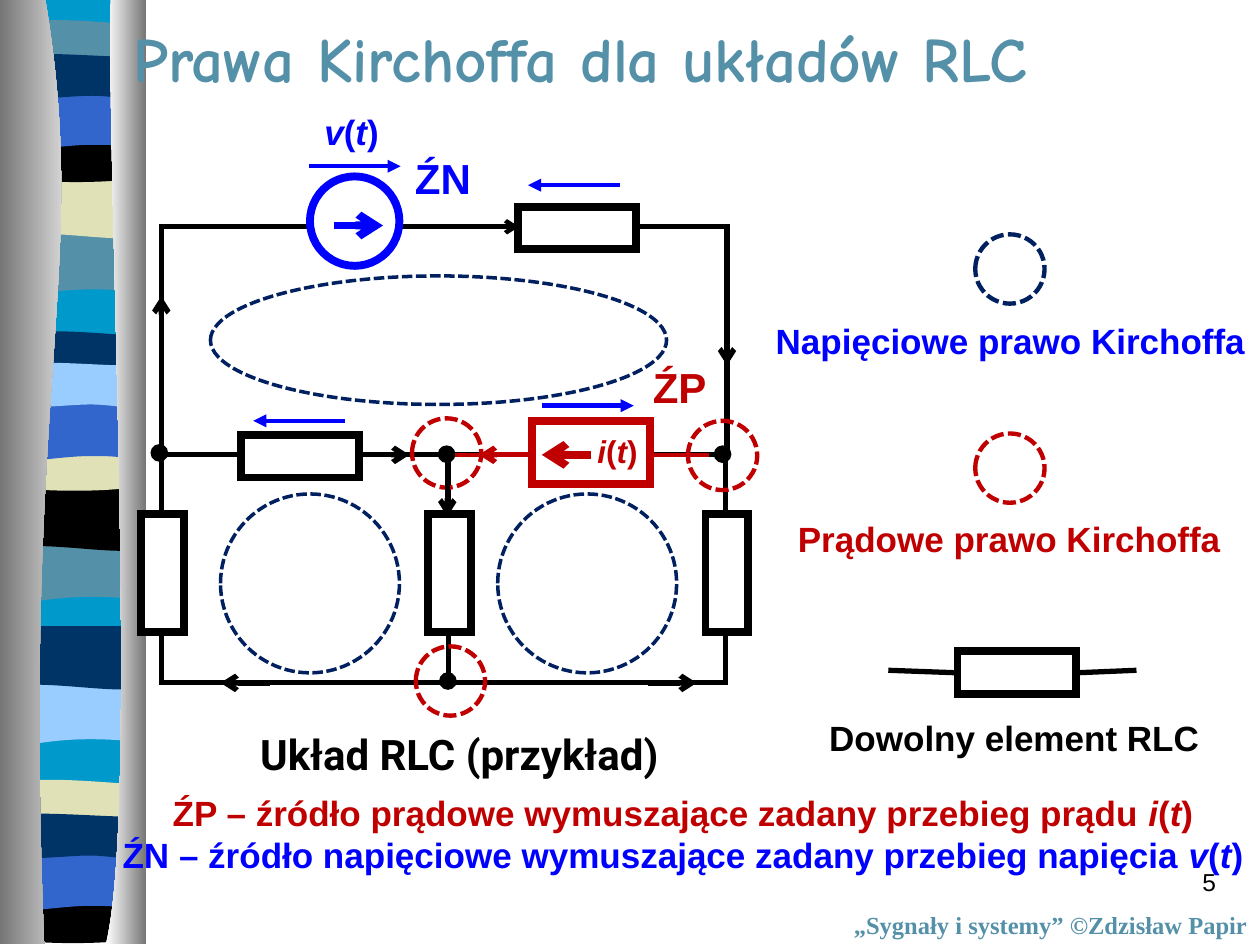
from lxml import etree
from pptx import Presentation
from pptx.dml.color import RGBColor
from pptx.enum.dml import MSO_LINE
from pptx.enum.shapes import MSO_CONNECTOR, MSO_SHAPE
from pptx.enum.text import MSO_ANCHOR, MSO_AUTO_SIZE, PP_ALIGN
from pptx.oxml.ns import qn
from pptx.util import Inches, Pt

OVAL, RECT = MSO_SHAPE.OVAL, MSO_SHAPE.RECTANGLE
DASH = MSO_LINE.SQUARE_DOT
STRAIGHT = MSO_CONNECTOR.STRAIGHT
LEFT, CENTER, RIGHT = PP_ALIGN.LEFT, PP_ALIGN.CENTER, PP_ALIGN.RIGHT
TOP, MIDDLE = MSO_ANCHOR.TOP, MSO_ANCHOR.MIDDLE
GROW, FIXED = MSO_AUTO_SIZE.SHAPE_TO_FIT_TEXT, MSO_AUTO_SIZE.NONE

BLACK, WHITE, BLUE, RED, NAVY = "000000", "FFFFFF", "0000FF", "C00000", "002060"
TEAL, CREAM, DEEP, ROYAL, SKY, CYAN = "5490A8", "E1E1B7", "003366", "3366CC", "99CCFF", "0099CC"
GREY = "767676"


def rgb(hex_color):
    return RGBColor.from_string(hex_color)


class SlideBuilder:
    font = "Arial"

    def __init__(self, slide):
        self.shapes = slide.shapes

    def text(self, box, paragraphs, size, font=None, align=CENTER, anchor=TOP,
             bold=True, wrap=False, before=0):
        """Each paragraph is (colour, runs); every second run is italic."""
        frame = self.shapes.add_textbox(*map(Inches, box)).text_frame
        frame.word_wrap = wrap
        frame.auto_size = FIXED if wrap else GROW
        frame.vertical_anchor = anchor
        for index, (color, runs) in enumerate(paragraphs):
            paragraph = frame.add_paragraph() if index else frame.paragraphs[0]
            paragraph.alignment = align
            paragraph.space_before = Pt(before)
            for position, words in enumerate(runs):
                if not words:
                    continue
                run = paragraph.add_run()
                run.text = words
                run.font.name = font or self.font
                run.font.size = Pt(size)
                run.font.bold = bold
                run.font.italic = position % 2 == 1
                run.font.color.rgb = rgb(color)

    def shape(self, kind, box, color, width, fill=None, dash=None):
        shape = self.shapes.add_shape(kind, *map(Inches, box))
        shape.shadow.inherit = False
        if fill:
            shape.fill.solid()
            shape.fill.fore_color.rgb = rgb(fill)
        else:
            shape.fill.background()
        shape.line.color.rgb = rgb(color)
        shape.line.width = Pt(width)
        if dash:
            shape.line.dash_style = dash
        etree.SubElement(shape.line._get_or_add_ln(), qn("a:miter"), lim="800000")

    def dot(self, x, y):
        self.shape(OVAL, (x, y, 0.13, 0.13), BLACK, 0.75, BLACK)

    def ring(self, x, y, color=RED):
        self.shape(OVAL, (x, y, 0.55, 0.55), color, 2.5, dash=DASH)

    def element(self, x, y, w=0.94, h=0.34, color=BLACK):
        self.shape(RECT, (x, y, w, h), color, 4.5, WHITE)

    def line(self, start, end, color=BLACK, width=3, tip=None):
        line = self.shapes.add_connector(STRAIGHT, *map(Inches, start + end))
        line.line.color.rgb = rgb(color)
        line.line.width = Pt(width)
        if tip:
            etree.SubElement(line.line._get_or_add_ln(), qn("a:tailEnd"), type=tip)
        etree.SubElement(line._element.spPr, qn("a:effectLst"))

    def freeform(self, segments, *colors, left=0, top=0):
        """Segments of 2 numbers are corners, of 6 Bézier curves.
        One colour gives a plain fill, two a left-to-right gradient."""
        points = [(Inches(left + x), Inches(top + y))
                  for segment in segments
                  for x, y in zip(segment[::2], segment[1::2])]
        builder = self.shapes.build_freeform(*points[0], scale=1.0)
        builder.add_line_segments(points[1:], close=True)
        shape = builder.convert_to_shape()
        # Join the three points of each curve into one Bézier command
        commands = iter(list(shape._element.iter(qn("a:lnTo"))))
        for segment in segments[1:]:
            command = next(commands)
            if len(segment) == 6:
                command.tag = qn("a:cubicBezTo")
                for _ in range(2):
                    extra = next(commands)
                    command.append(extra[0])
                    extra.getparent().remove(extra)
        shape.shadow.inherit = False
        shape.line.fill.background()
        if len(colors) == 1:
            shape.fill.solid()
            shape.fill.fore_color.rgb = rgb(colors[0])
            return
        shape.fill.gradient()
        shape.fill.gradient_angle = 0
        for stop, color in zip(shape.fill.gradient_stops, colors):
            stop.color.rgb = rgb(color)


def draw_ribbon(page):
    page.freeform([(1.14, 0), (1.14, 7.47), (0.06, 7.47), (0.06, 0)], CYAN)
    # Six wavy profiles, each used once in three sections: (left, tops, colours)
    profiles = [
        [(1.08, 0), (1.08, 0, 1.08, 0.47, 1.08, 0.47),
         (0.33, 0.39, 0.18, 0.55, 0, 0.47), (0, 0)],
        [(1.08, 0), (1.08, 0.48), (0.9, 0.55, 0.34, 0.42, 0, 0.48), (0, 0)],
        [(1.08, 0.05), (1.08, 0.29), (0.9, 0.33, 0.18, 0.33, 0, 0.29), (0, 0.05),
         (0.07, 0, 0.23, 0.01, 0.41, 0.01), (0.59, 0.01, 0.94, 0.04, 1.08, 0.05)],
        [(1.08, 0), (1.08, 0.32), (0.9, 0.38, 0.18, 0.38, 0, 0.32), (0, 0),
         (0.67, 0.05, 0.86, 0, 1.08, 0)],
        [(1.08, 0), (1.08, 0, 1.08, 0.47, 1.08, 0.47), (0.91, 0.42, 0.84, 0.42, 0.66, 0.42),
         (0.48, 0.42, 0.16, 0.47, 0, 0.47), (0, 0)],
        [(1.08, 0.05), (1.08, 0.36), (1.01, 0.41, 0.85, 0.36, 0.67, 0.36),
         (0.49, 0.36, 0.11, 0.41, 0, 0.36), (0, 0.05),
         (0.15, 0, 0.74, 0.05, 0.92, 0.05), (1.1, 0.05, 1.05, 0.05, 1.08, 0.05)],
    ]
    sections = [
        (0.06, (1.85, 1.39, 0.15, 1.08, 0.73, 0.4), (TEAL, CREAM, TEAL, BLACK, ROYAL, DEEP)),
        (0.05, (4.29, 3.87, 2.62, 3.53, 3.2, 2.85), (TEAL, BLACK, DEEP, CREAM, ROYAL, SKY)),
        (0.04, (5.42, 4.97, 6.18, 7.12, 6.77, 6.43), (SKY, DEEP, CREAM, BLACK, ROYAL, DEEP)),
    ]
    for left, tops, colors in sections:
        for profile, top, color in zip(profiles, tops, colors):
            page.freeform(profile, color, left=left, top=top)
    # Shaded panels on both sides
    page.freeform([(0.36, 0), (0.72, 2.16, 0.17, 2.96, 0.35, 7.49), (0, 7.49), (0, 0)],
                  GREY, WHITE)
    page.freeform([(0.88, 0), (0.84, 1.25, 1.11, 6.46, 0.84, 7.49), (1.16, 7.49), (1.16, 0)],
                  WHITE, GREY)


def draw_circuit(page):
    # Nodes and wires
    for x, y in [(3.48, 3.54), (5.67, 3.54), (1.2, 3.53), (3.49, 5.34)]:
        page.dot(x, y)
    for box in [(1.28, 1.8, 4.49, 1.81), (1.28, 3.61, 2.28, 1.81), (3.56, 3.61, 2.2, 1.81)]:
        page.shape(RECT, box, BLACK, 3)
    # Elements and sources
    page.element(4.11, 1.64)
    page.element(1.91, 3.45)
    for x in (1.12, 3.4, 5.6):
        page.element(x, 4.08, 0.34, 0.94)
    page.shape(OVAL, (2.46, 1.4, 0.71, 0.71), BLUE, 4.5, WHITE)
    page.line((2.65, 1.79), (3.04, 1.79), BLUE, 4.5, "arrow")
    page.element(4.22, 3.34, h=0.5, color=RED)
    page.line((4.69, 3.61), (4.3, 3.61), RED, 4.5, "arrow")
    # Loops for the voltage law, rings for the current law
    for box in [(1.67, 2.19, 3.62, 1.02), (1.75, 3.92, 1.42, 1.42), (3.95, 3.92, 1.42, 1.42)]:
        page.shape(OVAL, box, NAVY, 2, dash=DASH)
    for x, y in [(3.27, 3.32), (3.3, 5.13), (5.46, 3.34)]:
        page.ring(x, y)
    # Current directions
    page.line((3.73, 1.8), (4.12, 1.8), BLACK, 2.5, "arrow")
    for start, end in [((5.14, 5.42), (5.53, 5.42)), ((2.85, 3.61), (3.25, 3.61)),
                       ((2.14, 5.42), (1.75, 5.42)), ((5.77, 2.5), (5.77, 2.9)),
                       ((1.28, 2.66), (1.28, 2.35)), ((3.55, 3.66), (3.55, 4.1))]:
        page.line(start, end, tip="arrow")
    page.line((4.19, 3.61), (3.8, 3.61), RED, 3, "arrow")
    for x in (3.61, 5.16):
        page.line((x, 3.61), (x + 0.47, 3.61), RED, 2.5)
    # Voltage directions
    for x1, x2, y in [(4.92, 4.19, 1.47), (2.74, 2.01, 3.34),
                      (4.3, 5.03, 3.22), (2.45, 3.18, 1.32)]:
        page.line((x1, y), (x2, y), BLUE, 2.5, "triangle")
    # Labels
    page.text((3.19, 1.16, 0.65, 0.5), [(BLUE, ["ŹN"])], 24)
    page.text((5.08, 2.82, 0.63, 0.5), [(RED, ["ŹP"])], 24)
    page.text((4.64, 3.38, 0.52, 0.4), [(RED, ["", "i", "(", "t", ")"])], 18)
    page.text((2.47, 0.83, 0.64, 0.44), [(BLUE, ["", "v", "(", "t", ")"])], 20)
    page.text((1.85, 5.73, 3.59, 0.5), [(BLACK, ["Układ RLC (przykład)"])], 24, "Roboto")


def draw_legend(page):
    page.ring(7.74, 1.86, NAVY)
    page.text((6.04, 2.49, 3.96, 0.44), [(BLUE, ["Napięciowe prawo Kirchoffa"])], 20)
    page.ring(7.74, 3.44)
    page.text((6.22, 4.06, 3.58, 0.44), [(RED, ["Prądowe prawo Kirchoffa"])], 20)
    page.element(7.6, 5.17)
    page.line((8.54, 5.34), (9.02, 5.32))
    page.line((7.6, 5.34), (7.05, 5.32))
    page.text((6.42, 5.64, 3.26, 0.44), [(BLACK, ["Dowolny element RLC"])], 20)


def main():
    presentation = Presentation()
    presentation.slide_width, presentation.slide_height = Inches(10), Inches(7.5)
    page = SlideBuilder(presentation.slides.add_slide(presentation.slide_layouts[6]))
    draw_ribbon(page)
    # Title, footer and page number
    page.text((0.96, -0.17, 8.75, 1.25), [(TEAL, ["Prawa Kirchoffa dla układów RLC"])], 36,
              "Comic Neue", LEFT, MIDDLE, wrap=True)
    page.text((6.54, 7.17, 3.46, 0.34), [(TEAL, ["„Sygnały i systemy” ©Zdzisław Papir"])], 14,
              "Times New Roman", RIGHT)
    page.text((7.67, 6.83, 2.08, 0.5), [(BLACK, ["5"])], 14, align=RIGHT, bold=False,
              wrap=True, before=7)
    draw_legend(page)
    draw_circuit(page)
    # Explanation of the sources
    page.text((0.84, 6.23, 9.16, 0.77), [
        (RED, ["ŹP – źródło prądowe wymuszające zadany przebieg prądu ", "i", "(", "t", ")"]),
        (BLUE, ["ŹN – źródło napięciowe wymuszające zadany przebieg napięcia ", "v", "(", "t", ")"]),
    ], 20)
    presentation.save("out.pptx")


if __name__ == "__main__":
    main()
